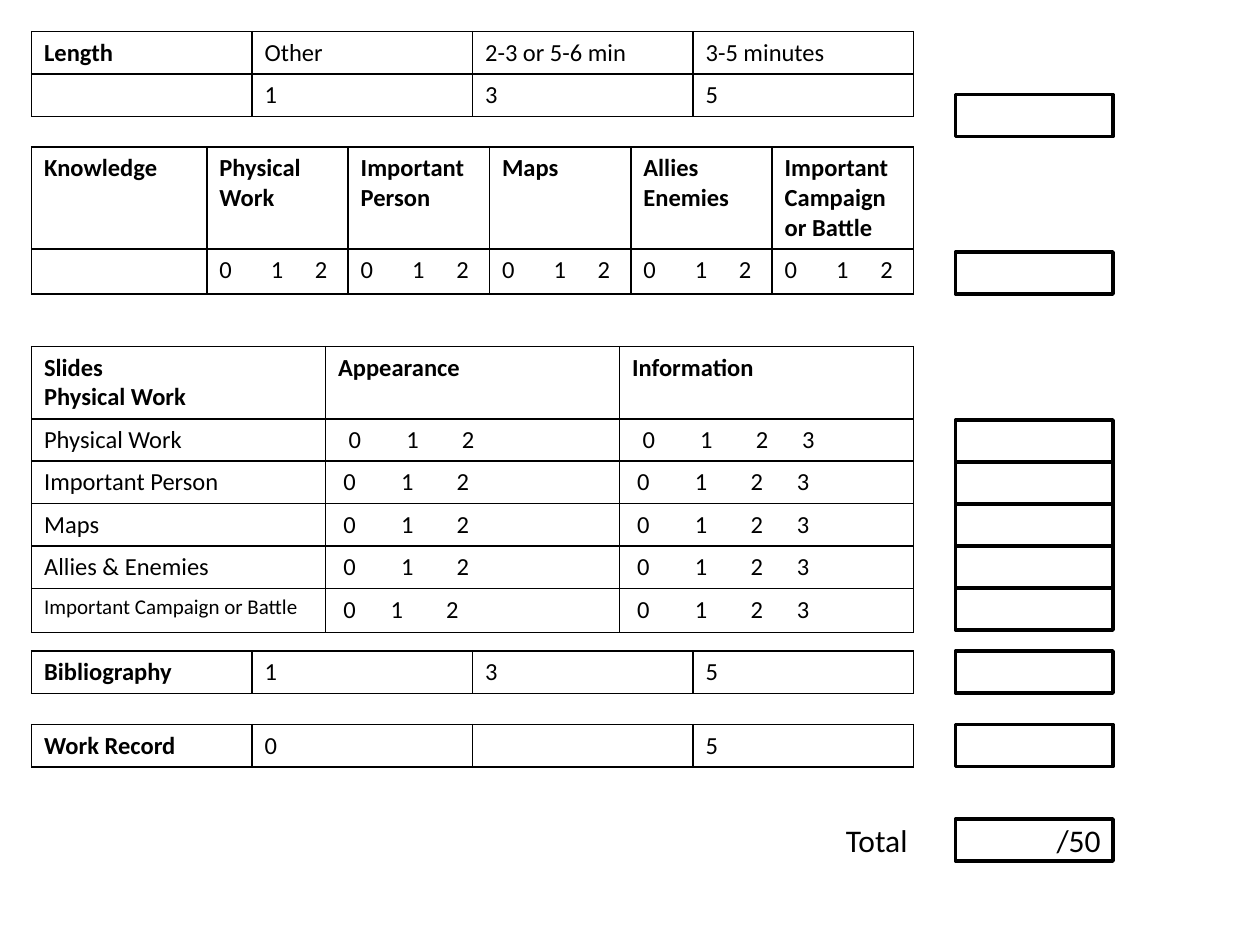
"""Build a one-page marking rubric with score boxes and a total."""
from dataclasses import dataclass

from lxml import etree
from pptx import Presentation
from pptx import util as u
from pptx.dml.color import RGBColor
from pptx.enum import shapes, text
from pptx.oxml import ns


@dataclass(frozen=True)
class Theme:
    font: str = "Calibri"
    ink: str = "000000"
    paper: str = "FFFFFF"
    small: int = 12
    body: int = 14
    large: int = 18
    grid: int = 1
    frame: int = 2


T = Theme()
SCALE = 914400 // 120
PAGE = (1200, 900)
LEFT, WIDTH = 30, 840
BOX_X, BOX_W, ROW = 910, 150, 40
TOTAL_Y = 780


def marks(top, stops, pad=0):
    return {"text": "\t".join(str(n) for n in range(top + 1)), "stops": stops, "pad": pad}


def head(label):
    return {"text": label, "bold": True}


SHORT = marks(2, (49, 91))
WIDE = (55, 108, 152)


def score(label, pad=5, stops=WIDE[:2], **form):
    return [{"text": label, **form}, marks(2, stops, pad), marks(3, WIDE, pad)]


TABLES = [
    {"top": 30, "first": 210, "rows": [ROW, ROW], "cells": [
        [head("Length"), "Other", "2-3 or 5-6 min", "3-5 minutes"],
        ["", "1", "3", "5"]]},
    {"top": 140, "first": 167, "rows": [97, 43], "cells": [
        [head(h) for h in ("Knowledge", "Physical Work", "Important Person", "Maps",
                           "Allies Enemies", "Important Campaign or Battle")],
        [""] + [SHORT] * 5]},
    {"top": 330, "first": 280, "rows": [67] + [ROW] * 4 + [42], "cells": [
        [head(h) for h in ("Slides\nPhysical Work", "Appearance", "Information")],
        score("Physical Work", pad=10),
        score("Important Person"),
        score("Maps"),
        score("Allies & Enemies"),
        score("Important Campaign or Battle", stops=(45, 98), size=T.small)]},
    {"top": 620, "first": 210, "rows": [ROW], "cells": [
        [head("Bibliography"), "1", "3", "5"]]},
    {"top": 690, "first": 210, "rows": [ROW], "cells": [
        [head("Work Record"), "0", "", "5"]]},
]
BOXES = [90, 240] + [400 + ROW * i for i in range(5)] + [620, 690]


def px(n):
    return u.Emu(round(n * SCALE))


def rgb(code):
    return RGBColor.from_string(code)


def write(frame, words, size=T.body, bold=False, align=None, stops=()):
    for i, line in enumerate(words.split("\n")):
        para = frame.add_paragraph() if i else frame.paragraphs[0]
        para.alignment = align
        if stops:
            tabs = etree.SubElement(para._p.get_or_add_pPr(), ns.qn("a:tabLst"))
            for stop in stops:
                etree.SubElement(tabs, ns.qn("a:tab"), pos=str(px(stop)), algn="l")
        if not line:
            para._p.get_or_add_endParaRPr().set("sz", str(size * 100))
            continue
        run = para.add_run()
        run.text = line
        font = run.font
        font.name, font.size, font.bold = T.font, u.Pt(size), bold
        font.color.rgb = rgb(T.ink)


def edge(cell):
    props = cell._tc.get_or_add_tcPr()
    for side in "LRTB":
        line = etree.SubElement(props, ns.qn(f"a:ln{side}"), w=str(u.Pt(T.grid)))
        fill = etree.SubElement(line, ns.qn("a:solidFill"))
        etree.SubElement(fill, ns.qn("a:srgbClr"), val=T.ink)


def draw_table(slide, top, first, rows, cells):
    count = len(cells[0])
    table = slide.shapes.add_table(len(rows), count, px(LEFT), px(top),
                                   px(WIDTH), px(sum(rows))).table
    table.first_row = table.horz_banding = False
    rest = (WIDTH - first) / (count - 1)
    for i, col in enumerate(table.columns):
        col.width = px(rest if i else first)
    for r, (high, line) in enumerate(zip(rows, cells)):
        table.rows[r].height = px(high)
        for c, item in enumerate(line):
            form = dict(item) if isinstance(item, dict) else {"text": item}
            cell = table.cell(r, c)
            edge(cell)
            cell.fill.solid()
            cell.fill.fore_color.rgb = rgb(T.paper)
            cell.margin_left = px(12 + form.pop("pad", 0))
            write(cell.text_frame, form.pop("text"), **form)


def draw_box(slide, left, top, words="", line=T.ink, align=None):
    box = slide.shapes.add_shape(shapes.MSO_SHAPE.RECTANGLE, px(left), px(top),
                                 px(BOX_W), px(ROW))
    box.shadow.inherit = False
    box.fill.solid()
    box.fill.fore_color.rgb = rgb(T.paper)
    box.line.color.rgb = rgb(line)
    box.line.width = u.Pt(T.frame)
    box.text_frame.vertical_anchor = text.MSO_ANCHOR.MIDDLE
    write(box.text_frame, words, size=T.large, align=align)


def main():
    deck = Presentation()
    deck.slide_width, deck.slide_height = map(px, PAGE)
    slide = deck.slides.add_slide(deck.slide_layouts[6])
    for table in TABLES:
        draw_table(slide, **table)
    for top in BOXES:
        draw_box(slide, BOX_X, top)
    draw_box(slide, BOX_X - BOX_W, TOTAL_Y, "Total", T.paper, text.PP_ALIGN.CENTER)
    draw_box(slide, BOX_X, TOTAL_Y, "/50", align=text.PP_ALIGN.RIGHT)
    deck.save("out.pptx")


if __name__ == "__main__":
    main()
